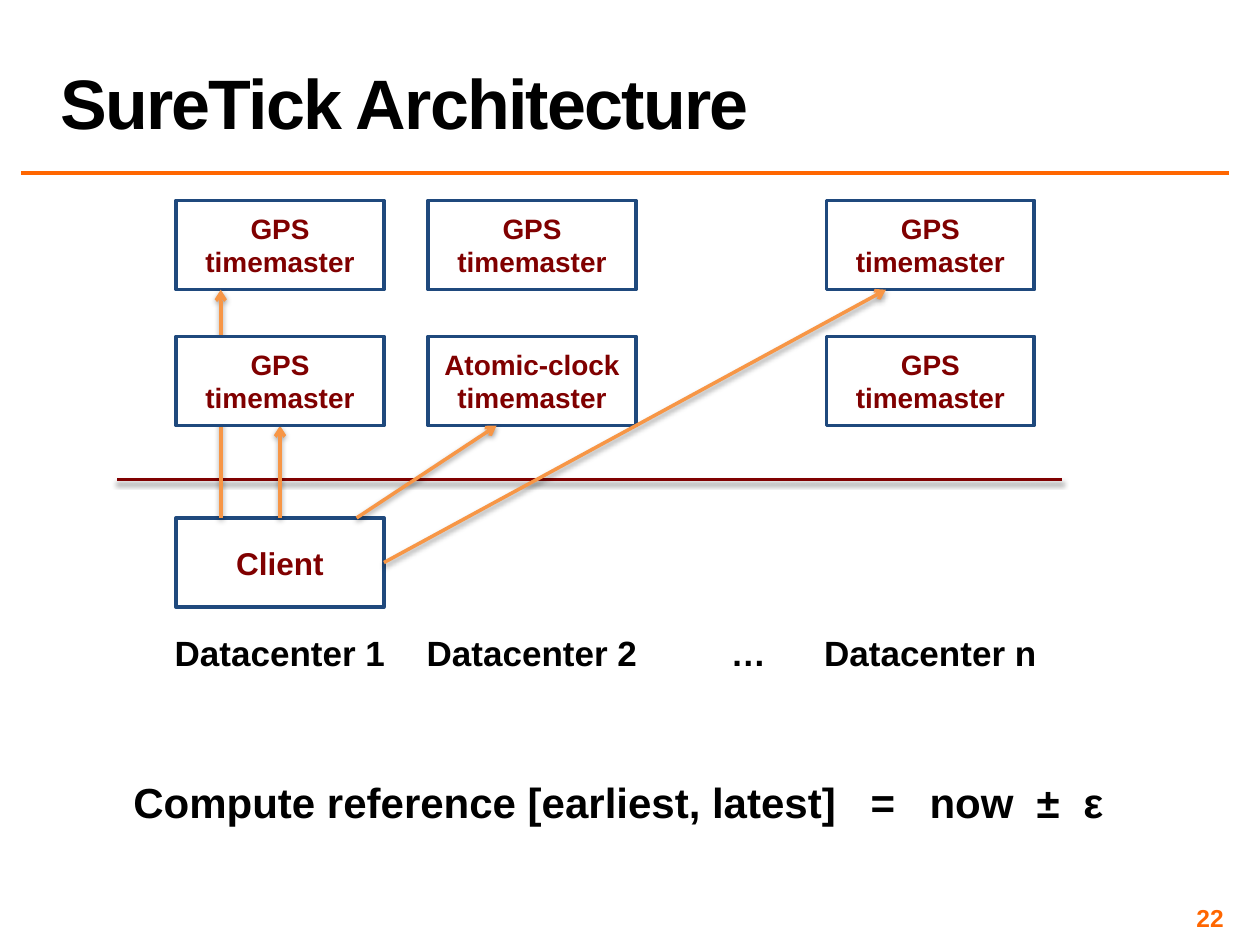
from lxml import etree
from pptx import Presentation
from pptx.dml.color import RGBColor
from pptx.enum.shapes import MSO_CONNECTOR as Connector, MSO_SHAPE as Preset
from pptx.enum.text import MSO_ANCHOR as Anchor, PP_ALIGN as Align
from pptx.oxml.ns import qn
from pptx.util import Cm, Pt

COLORS = {
    "ink": "000000",
    "accent": "FF6600",
    "maroon": "800000",
    "navy": "1F497D",
    "arrow": "F79646",
    "paper": "FFFFFF",
}

TITLE = "SureTick Architecture"
PAGE = "22"
FORMULA = "Compute reference [earliest, latest]\t=\tnow\t±\tε"
FORMULA_TABS = (14.86, 16.05, 18.21, 19.15)
GPS = "GPS timemaster"
ATOMIC = "Atomic-clock timemaster"
# label, left edge of its boxes, timemasters from top to bottom
DATACENTERS = [
    ("Datacenter 1", 3.55, (GPS, GPS)),
    ("Datacenter 2", 8.63, (GPS, ATOMIC)),
    ("Datacenter n", 16.66, (GPS, GPS)),
]
ELLIPSIS_CENTER = 15.09

BOX_W, BOX_H = 4.19, 1.8
ROW_TOPS = (4.04, 6.78)
ROW_BOTTOMS = [top + BOX_H for top in ROW_TOPS]
CLIENT_LEFT, CLIENT_TOP = DATACENTERS[0][1], 10.44
CLIENT_MIDDLE = (CLIENT_LEFT + BOX_W, CLIENT_TOP + BOX_H / 2)
LABEL_TOP, LABEL_W, LABEL_H = 12.61, 4.83, 1.12

prs = Presentation()
prs.slide_width, prs.slide_height = Cm(25.4), Cm(19.05)
slide = prs.slides.add_slide(prs.slide_layouts[6])
shapes = slide.shapes


def rgb(name):
    return RGBColor.from_string(COLORS[name])


def write(holder, text, size, color="ink", align=Align.CENTER, anchor=Anchor.TOP,
          wrap=True, inset=None, line_spacing=None, tracking=None, tabs=()):
    frame = holder.text_frame
    frame.word_wrap = wrap
    frame.vertical_anchor = anchor
    if inset is not None:
        frame.margin_left = frame.margin_right = Cm(inset)
        frame.margin_top = frame.margin_bottom = Cm(inset)
    paragraph = frame.paragraphs[0]
    paragraph.alignment = align
    if line_spacing:
        paragraph.line_spacing = line_spacing
    run = paragraph.add_run()
    run.text = text
    run.font.name, run.font.size, run.font.bold = "Arial", Pt(size), True
    run.font.color.rgb = rgb(color)
    if tracking:
        run.font._element.set("spc", str(tracking))
    if tabs:
        tab_list = etree.SubElement(paragraph._p.get_or_add_pPr(), qn("a:tabLst"))
        for position in tabs:
            etree.SubElement(tab_list, qn("a:tab"), pos=str(Cm(position)), algn="l")


def text_area(left, top, width, height, text, size, **style):
    area = shapes.add_textbox(Cm(left), Cm(top), Cm(width), Cm(height))
    write(area, text, size, **style)


def box(left, top, text, size=16):
    rect = shapes.add_shape(Preset.RECTANGLE, Cm(left), Cm(top), Cm(BOX_W), Cm(BOX_H))
    rect.shadow.inherit = False
    rect.fill.solid()
    rect.fill.fore_color.rgb = rgb("paper")
    rect.line.color.rgb = rgb("navy")
    rect.line.width = Pt(2)
    write(rect, text, size, color="maroon", anchor=Anchor.MIDDLE)
    return rect


def line(start, end, color, shadow=True, arrow=False):
    link = shapes.add_connector(Connector.STRAIGHT, *map(Cm, start + end))
    link.line.color.rgb = rgb(color)
    link.line.width = Pt(2)
    if arrow:
        etree.SubElement(link.line._get_or_add_ln(), qn("a:tailEnd"), type="arrow")
    effects = etree.SubElement(link._element.spPr, qn("a:effectLst"))
    if shadow:
        cast = etree.SubElement(effects, qn("a:outerShdw"), blurRad="40000",
                                dist="20000", dir="5400000", rotWithShape="0")
        shade = etree.SubElement(cast, qn("a:srgbClr"), val=COLORS["ink"])
        etree.SubElement(shade, qn("a:alpha"), val="38000")
    return link


line((0.43, 3.49), (24.77, 3.49), "accent", shadow=False)
text_area(0.97, 0.04, 23.8, 2.97, TITLE, 40, align=Align.LEFT,
          anchor=Anchor.BOTTOM, line_spacing=0.8, tracking=-100)

labels = [(name, left + BOX_W / 2) for name, left, _ in DATACENTERS]
for name, center in labels + [("…", ELLIPSIS_CENTER)]:
    text_area(center - LABEL_W / 2, LABEL_TOP, LABEL_W, LABEL_H, name, 20, wrap=False)

timemasters = {
    (column, row): box(left, ROW_TOPS[row], text)
    for column, (_, left, masters) in enumerate(DATACENTERS)
    for row, text in enumerate(masters)
}
client = box(CLIENT_LEFT, CLIENT_TOP, "Client", 18)

line((2.36, 9.67), (21.41, 9.67), "maroon")
line((7.19, CLIENT_TOP), (10.01, ROW_BOTTOMS[1]), "arrow", arrow=True)
to_last = line(CLIENT_MIDDLE, (17.86, ROW_BOTTOMS[0]), "arrow", arrow=True)
to_last.begin_connect(client, 3)
local_x = CLIENT_LEFT + BOX_W / 2
to_local = line((local_x, CLIENT_TOP), (local_x, ROW_BOTTOMS[1]), "arrow", arrow=True)
to_local.begin_connect(client, 0)
to_local.end_connect(timemasters[0, 1], 2)
line((4.45, CLIENT_TOP), (4.45, ROW_BOTTOMS[0]), "arrow", arrow=True)

# The long arrow passes behind the lower timemaster of the first datacenter
shapes._spTree.append(timemasters[0, 1]._element)

text_area(2.44, 15.52, 20.27, 1.27, FORMULA, 24, align=Align.LEFT,
          wrap=False, tabs=FORMULA_TABS)
text_area(18.85, 18.21, 5.92, 0.58, PAGE, 14, color="accent",
          align=Align.RIGHT, anchor=Anchor.MIDDLE, inset=0.1)

prs.save("out.pptx")
